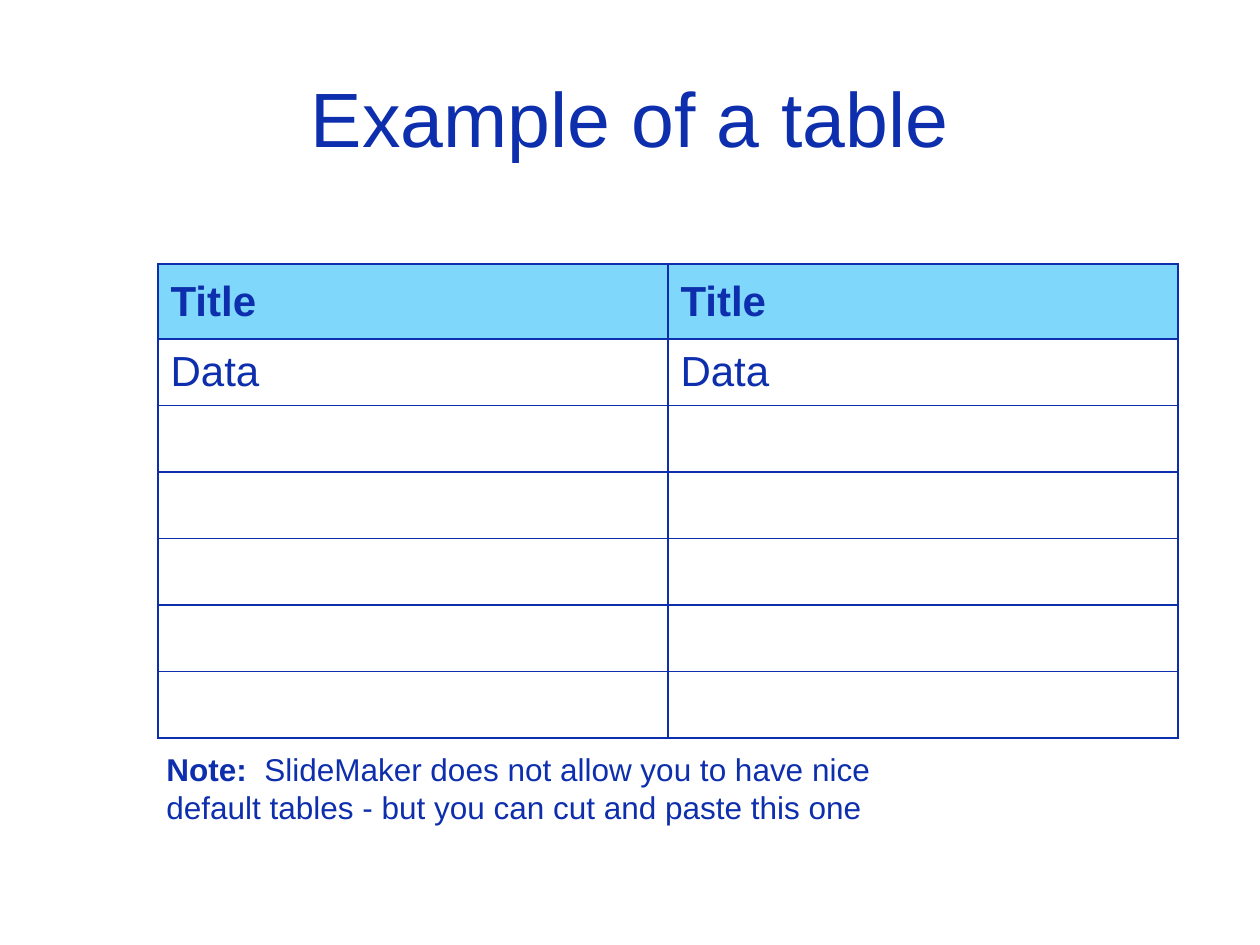
from lxml import etree
from pptx import Presentation
from pptx.dml.color import RGBColor
from pptx.enum.text import MSO_ANCHOR, PP_ALIGN
from pptx.oxml.ns import qn
from pptx.util import Emu, Pt

LEFT, CENTER = PP_ALIGN.LEFT, PP_ALIGN.CENTER
TOP, MIDDLE = MSO_ANCHOR.TOP, MSO_ANCHOR.MIDDLE
SCALE = 914400 / 126
BLUE, SKY = "0E2FAD", "7FD7FC"


def px(n):
    return Emu(round(n * SCALE))


def color(code):
    return RGBColor.from_string(code)


class Deck:
    font = "Arial"
    ink = BLUE

    def __init__(self, wide, high):
        self.prs = Presentation()
        self.prs.slide_width, self.prs.slide_height = px(wide), px(high)
        self.slide = self.prs.slides.add_slide(self.prs.slide_layouts[6])

    def style(self, run, size, bold=False):
        run.font.name = self.font
        run.font.size = Pt(size)
        run.font.bold = bold
        run.font.color.rgb = color(self.ink)

    def text(self, box, parts, size, align=LEFT, anchor=TOP):
        """Add a text box; parts is a list of (words, bold)."""
        frame = self.slide.shapes.add_textbox(*map(px, box)).text_frame
        frame.word_wrap = True
        frame.vertical_anchor = anchor
        para = frame.paragraphs[0]
        para.alignment = align
        for words, bold in parts:
            run = para.add_run()
            run.text = words
            self.style(run, size, bold)

    def border(self, cell):
        props = cell._tc.get_or_add_tcPr()
        for spot, side in enumerate(("a:lnL", "a:lnR", "a:lnT", "a:lnB")):
            line = etree.Element(qn(side), w=str(Pt(1)))
            fill = etree.SubElement(line, qn("a:solidFill"))
            etree.SubElement(fill, qn("a:srgbClr"), val=self.ink)
            props.insert(spot, line)

    def table(self, box, rows, head, size):
        """Add a table with a filled first row, head px high."""
        high = box[3]
        grid = self.slide.shapes.add_table(
            len(rows), len(rows[0]), *map(px, box)).table
        for r, row in enumerate(rows):
            rest = (high - head) / (len(rows) - 1)
            grid.rows[r].height = px(rest if r else head)
            for c, words in enumerate(row):
                cell = grid.cell(r, c)
                cell.vertical_anchor = MIDDLE
                if r == 0:
                    cell.fill.solid()
                    cell.fill.fore_color.rgb = color(SKY)
                else:
                    cell.fill.background()
                self.border(cell)
                if words:
                    para = cell.text_frame.paragraphs[0]
                    para.text = words
                    self.style(para.runs[0], size, r == 0)

    def save(self):
        self.prs.save("out.pptx")


def main():
    deck = Deck(1260, 945)
    deck.text((63, 38, 1134, 158), [("Example of a table", False)], 44,
              CENTER, MIDDLE)
    rows = [("Title", "Title"), ("Data", "Data")] + [("", "")] * 5
    deck.table((158, 264, 1020, 474), rows, 75, 24)
    note = [("Note:  ", True),
            ("SlideMaker does not allow you to have nice default tables"
             " - but you can cut and paste this one", False)]
    deck.text((154, 744, 776, 89), note, 18)
    deck.save()


if __name__ == "__main__":
    main()
